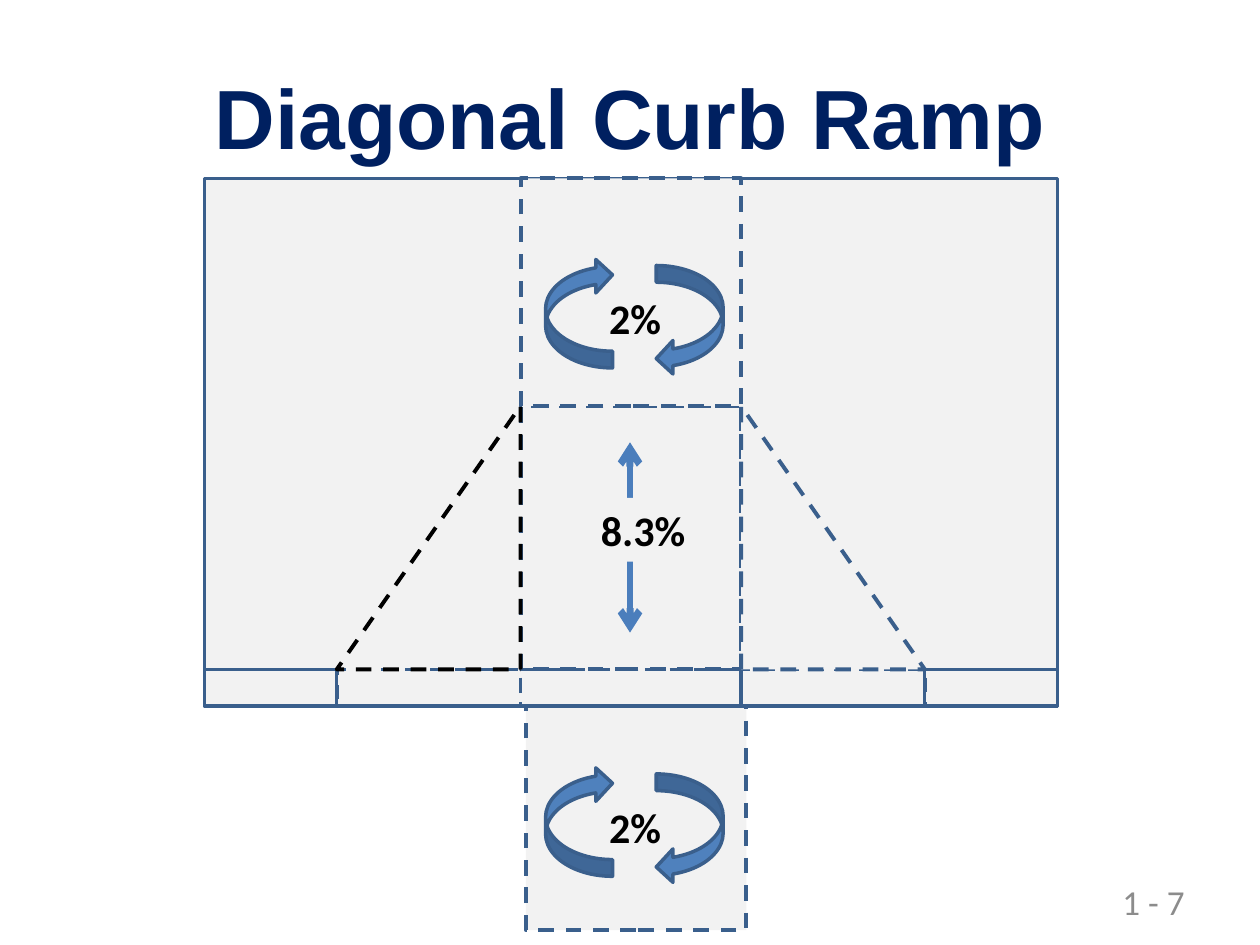
"""Draw a plan view of a diagonal curb ramp with its slopes."""
from dataclasses import dataclass
from typing import Any, Optional

import lxml.etree
import pptx
import pptx.dml.color
import pptx.enum.dml
import pptx.enum.shapes
import pptx.enum.text
import pptx.oxml.ns
import pptx.util

Pt = pptx.util.Pt
RGBColor = pptx.dml.color.RGBColor
SHAPE = pptx.enum.shapes.MSO_SHAPE
ALIGN = pptx.enum.text.PP_ALIGN
ANCHOR = pptx.enum.text.MSO_ANCHOR
qn = pptx.oxml.ns.qn

CONCRETE = RGBColor(0xF2, 0xF2, 0xF2)
OUTLINE = RGBColor(0x3A, 0x5F, 0x8C)
ARROW_FILL = RGBColor(0x4F, 0x81, 0xBD)
ARROW_LINE = RGBColor(0x4B, 0x7E, 0xBC)
NAVY = RGBColor(0x00, 0x20, 0x60)
GRAY = RGBColor(0x8C, 0x8C, 0x8C)
BLACK = RGBColor(0x00, 0x00, 0x00)

WALK_X, WALK_Y, WALK_W, WALK_H = 116.75, 102, 487.5, 301.5
RAMP_W, RAMP_H = 126, 150.5
LANDING_H = 130
FLARE_W = 105
RAMP_X = WALK_X + (WALK_W - RAMP_W) / 2
RAMP_Y = WALK_Y + LANDING_H
RAMP_RIGHT = RAMP_X + RAMP_W
CURB_Y = RAMP_Y + RAMP_H
CURB_H = WALK_Y + WALK_H - CURB_Y
SIDE_W = (WALK_W - RAMP_W) / 2 - FLARE_W


@dataclass(frozen=True)
class Panel:
    """Describe one outlined area of the plan."""

    x: float
    y: float
    w: float
    h: float
    weight: float = 2.25
    dashed: bool = True
    fill: Optional[RGBColor] = None
    line: RGBColor = OUTLINE
    kind: Any = SHAPE.RECTANGLE
    flip: bool = False
    rotation: float = 0


PANELS = (
    Panel(300.5, 401.5, RAMP_W, LANDING_H, fill=CONCRETE),
    Panel(WALK_X, WALK_Y, WALK_W, WALK_H, 1.75, False, CONCRETE),
    Panel(RAMP_X, RAMP_Y, RAMP_W, RAMP_H),
    Panel(RAMP_X, WALK_Y, RAMP_W, LANDING_H, fill=CONCRETE),
    Panel(RAMP_X, CURB_Y, RAMP_W, CURB_H, 2),
    Panel(RAMP_X - FLARE_W, CURB_Y, FLARE_W, CURB_H, 2),
    Panel(RAMP_RIGHT, CURB_Y, FLARE_W, CURB_H, 2),
    Panel(WALK_X, CURB_Y, SIDE_W, CURB_H, 1.75, False),
    Panel(RAMP_RIGHT + FLARE_W, CURB_Y, SIDE_W, CURB_H, 1.75, False),
)
FLARES = (
    Panel(RAMP_X - FLARE_W, RAMP_Y, FLARE_W, RAMP_H, line=BLACK,
          kind=SHAPE.RIGHT_TRIANGLE, flip=True),
    Panel(RAMP_RIGHT, RAMP_Y, FLARE_W, RAMP_H, fill=CONCRETE,
          kind=SHAPE.RIGHT_TRIANGLE),
)


def add_panel(shapes: Any, panel: Panel) -> None:
    """Draw one outlined area or turning arrow."""
    sp = shapes.add_shape(panel.kind, Pt(panel.x), Pt(panel.y), Pt(panel.w), Pt(panel.h))
    sp.shadow.inherit = False
    sp.rotation = panel.rotation
    if panel.fill is None:
        sp.fill.background()
    else:
        sp.fill.solid()
        sp.fill.fore_color.rgb = panel.fill
    sp.line.color.rgb = panel.line
    sp.line.width = Pt(panel.weight)
    if panel.dashed:
        sp.line.dash_style = pptx.enum.dml.MSO_LINE.DASH
    if panel.flip:
        sp.element.spPr.get_or_add_xfrm().set("flipH", "1")


def add_text(shapes: Any, text: str, x: float, y: float, w: float, h: float, *,
             size: float = 24, font: str = "Calibri", color: RGBColor = BLACK,
             bold: bool = True, align: Any = ALIGN.CENTER, anchor: Any = ANCHOR.TOP,
             wrap: bool = False, fill: Optional[RGBColor] = None) -> None:
    """Place one line of formatted text."""
    sp = shapes.add_textbox(Pt(x), Pt(y), Pt(w), Pt(h))
    if fill is not None:
        sp.fill.solid()
        sp.fill.fore_color.rgb = fill
    tf = sp.text_frame
    tf.word_wrap = wrap
    tf.vertical_anchor = anchor
    if not wrap:
        tf.auto_size = pptx.enum.text.MSO_AUTO_SIZE.SHAPE_TO_FIT_TEXT
    p = tf.paragraphs[0]
    p.alignment = align
    r = p.add_run()
    r.text = text
    r.font.name = font
    r.font.size = Pt(size)
    r.font.bold = bold
    r.font.color.rgb = color


def add_slope_arrow(shapes: Any, x: float, top: float, bottom: float) -> None:
    """Draw a vertical line with an arrowhead at each end."""
    line = shapes.add_connector(pptx.enum.shapes.MSO_CONNECTOR.STRAIGHT,
                                Pt(x), Pt(top), Pt(x), Pt(bottom))
    line.line.color.rgb = ARROW_LINE
    line.line.width = Pt(4)
    ln = line.line._get_or_add_ln()
    for end in ("a:headEnd", "a:tailEnd"):
        lxml.etree.SubElement(ln, qn(end)).set("type", "arrow")
    lxml.etree.SubElement(line.element.spPr, qn("a:effectLst"))


def add_turning_space(shapes: Any, y: float) -> None:
    """Draw a pair of turning arrows around their slope label."""
    group = shapes.add_group_shape().shapes
    for x, offset, rotation in ((311.75, 0, 180), (375, 4.25, 0)):
        add_panel(group, Panel(x, y + offset, 38.25, 62.75, 2, False, ARROW_FILL,
                               kind=SHAPE.CURVED_LEFT_ARROW, rotation=rotation))
    add_text(group, "2%", 340.5, y + 16.25, 44.75, 36.5)


def main() -> None:
    """Build and save the slide."""
    prs = pptx.Presentation()
    prs.slide_width, prs.slide_height = Pt(720), Pt(540)
    s = prs.slides.add_slide(prs.slide_layouts[6])
    for panel in PANELS:
        add_panel(s.shapes, panel)
    add_slope_arrow(s.shapes, 360, 252.75, 361.5)
    add_turning_space(s.shapes, 438)
    add_text(s.shapes, "8.3%", 336, 284.5, 63, 36.5, fill=CONCRETE)
    for flare in FLARES:
        add_panel(s.shapes, flare)
    add_text(s.shapes, "Diagonal Curb Ramp", 36, 21.5, 648, 90, size=48, font="Arial",
             color=NAVY, anchor=ANCHOR.MIDDLE, wrap=True)
    add_text(s.shapes, "1 - 7", 516, 500.5, 168, 28.75, size=20, color=GRAY, bold=False,
             align=ALIGN.RIGHT, anchor=ANCHOR.MIDDLE, wrap=True)
    add_turning_space(s.shapes, 147.5)
    prs.save("out.pptx")


if __name__ == "__main__":
    main()
